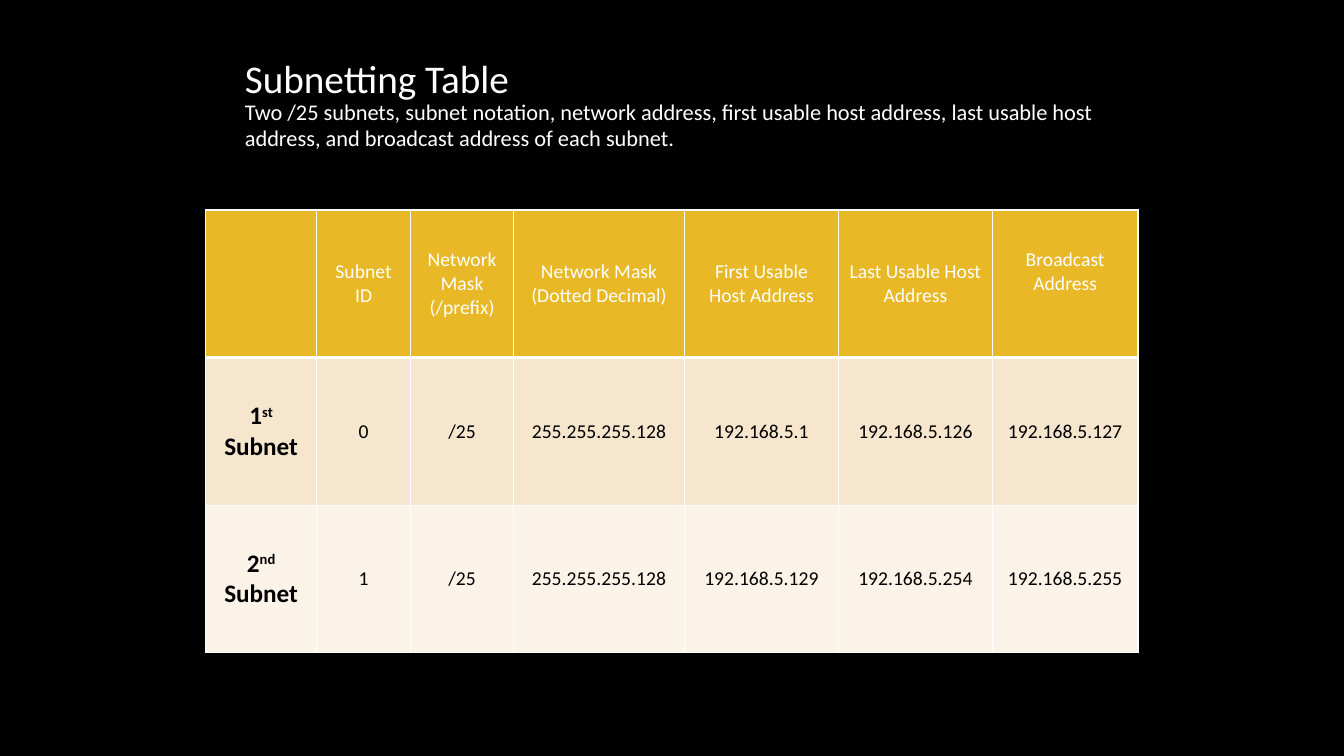
from dataclasses import dataclass

from lxml import etree
from pptx import Presentation
from pptx import util as u
from pptx.dml.color import RGBColor
from pptx.enum import text
from pptx.oxml.ns import qn

FACE = "Calibri"
WHITE, BLACK, GOLD = "FFFFFF", "000000", "E8B826"
MID = text.MSO_ANCHOR.MIDDLE


@dataclass
class Label:
    words: str
    top: float
    size: float
    anchor: text.MSO_ANCHOR


@dataclass
class Subnet:
    number: str
    suffix: str
    fill: str
    values: list[str]


LABELS = [
    Label("Two /25 subnets, subnet notation, network address, first usable host address, "
          "last usable host address, and broadcast address of each subnet.",
          66.2, 16, text.MSO_ANCHOR.TOP),
    Label("Subnetting Table", 36, 28, MID),
]
HEADS = ["Subnet ID", "Network Mask (/prefix)", "Network Mask (Dotted Decimal)",
         "First Usable Host Address", "Last Usable Host Address", "Broadcast Address"]
SUBNETS = [
    Subnet("1", "st", "F6E6CD", ["0", "/25", "255.255.255.128", "192.168.5.1",
                                 "192.168.5.126", "192.168.5.127"]),
    Subnet("2", "nd", "FBF3E8", ["1", "/25", "255.255.255.128", "192.168.5.129",
                                 "192.168.5.254", "192.168.5.255"]),
]
WIDTHS = [79.3, 67.1, 73.6, 122.1, 110, 110, 103.9]
HEIGHT = 105.4


def color(code: str) -> RGBColor:
    return RGBColor.from_string(code)


def style(para, size: float, code: str, bold: bool = False) -> None:
    font = para.font
    font.name, font.size, font.bold = FACE, u.Pt(size), bold
    font.color.rgb = color(code)


def add_label(slide, label: Label) -> None:
    box = slide.shapes.add_textbox(u.Pt(167.8), u.Pt(label.top), u.Pt(624), u.Pt(39.6))
    frame = box.text_frame
    frame.word_wrap = True
    frame.vertical_anchor = label.anchor
    para = frame.paragraphs[0]
    para.text = label.words
    style(para, label.size, WHITE)


def paint(cell, fill: str, base: float = 1) -> None:
    """Draw white borders, the lower one as wide as base, then the fill."""
    props = cell._tc.get_or_add_tcPr()
    for side, width in zip("LRTB", (1, 1, 1, base)):
        line = etree.SubElement(props, qn(f"a:ln{side}"), w=str(u.Pt(width)))
        solid = etree.SubElement(line, qn("a:solidFill"))
        etree.SubElement(solid, qn("a:srgbClr"), val=WHITE)
    cell.fill.solid()
    cell.fill.fore_color.rgb = color(fill)
    cell.vertical_anchor = MID


def write(cell, parts: list[str], size: float, code: str, bold: bool = False) -> None:
    """Write the parts as runs; the second one is raised."""
    para = cell.text_frame.paragraphs[0]
    para.alignment = text.PP_ALIGN.CENTER
    for spot, part in enumerate(parts):
        run = para.add_run()
        run.text = part
        if spot == 1:
            run._r.get_or_add_rPr().set("baseline", "30000")
    style(para, size, code, bold)


def add_grid(slide) -> None:
    count = len(SUBNETS) + 1
    grid = slide.shapes.add_table(count, len(WIDTHS), u.Pt(146.9), u.Pt(150),
                                  u.Pt(sum(WIDTHS)), u.Pt(HEIGHT * count)).table
    for column, width in zip(grid.columns, WIDTHS):
        column.width = u.Pt(width)
    for row in grid.rows:
        row.height = u.Pt(HEIGHT)

    # Header row, its first cell empty
    for col in range(len(WIDTHS)):
        paint(grid.cell(0, col), GOLD, 3)
    for col, head in enumerate(HEADS, 1):
        write(grid.cell(0, col), [head], 14, WHITE)
    # The last heading sits half a line higher
    grid.cell(0, len(HEADS)).margin_bottom = u.Pt(20.6)

    # One row for each subnet
    for row, net in enumerate(SUBNETS, 1):
        for col in range(len(WIDTHS)):
            paint(grid.cell(row, col), net.fill)
        write(grid.cell(row, 0), [net.number, net.suffix, " Subnet"], 18, BLACK, True)
        for col, value in enumerate(net.values, 1):
            write(grid.cell(row, col), [value], 14, BLACK)


def main() -> None:
    deck = Presentation()
    deck.slide_width, deck.slide_height = u.Pt(960), u.Pt(540)
    slide = deck.slides.add_slide(deck.slide_layouts[6])
    slide.background.fill.solid()
    slide.background.fill.fore_color.rgb = color(BLACK)
    for label in LABELS:
        add_label(slide, label)
    add_grid(slide)
    deck.save("out.pptx")


if __name__ == "__main__":
    main()
